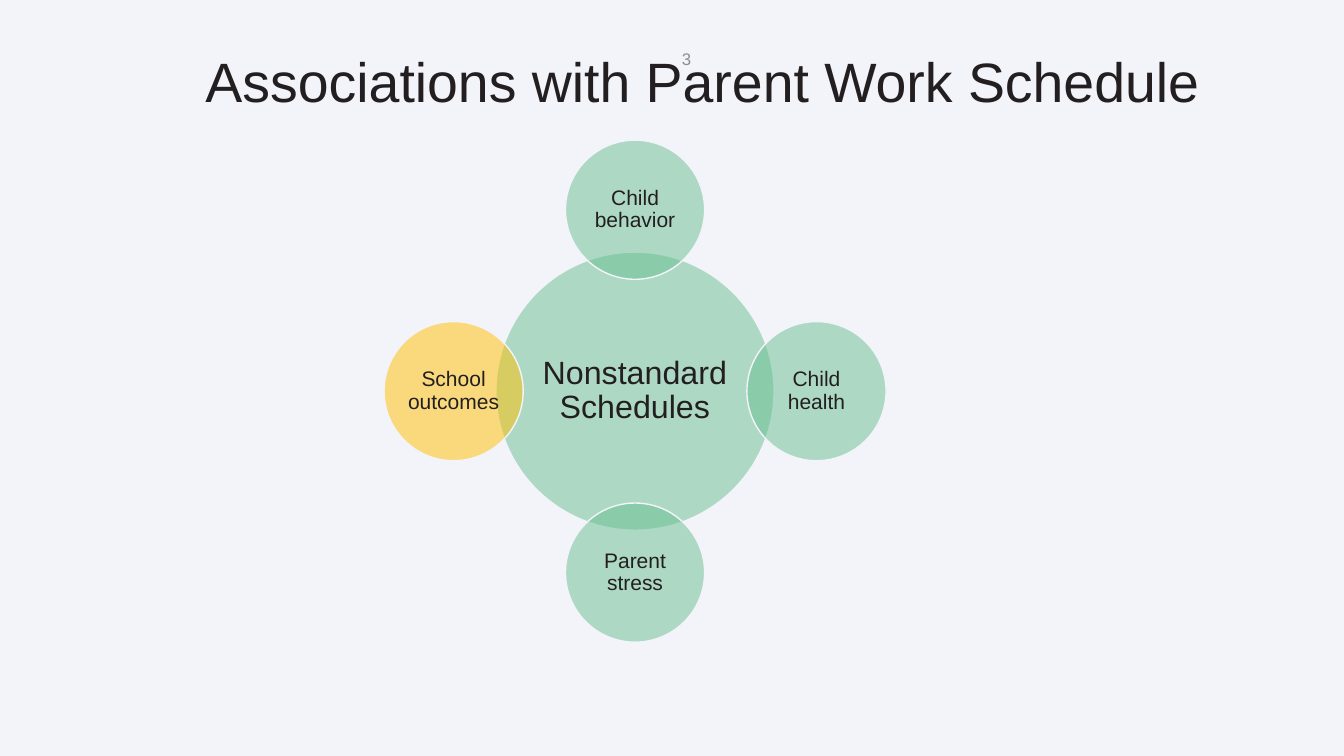
from lxml import etree
from pptx import Presentation
from pptx.dml.color import RGBColor
from pptx.enum.shapes import MSO_SHAPE
from pptx.enum.text import MSO_ANCHOR, PP_ALIGN
from pptx.oxml.ns import qn
from pptx.util import Pt

OVAL = MSO_SHAPE.OVAL
MIDDLE, BOTTOM = MSO_ANCHOR.MIDDLE, MSO_ANCHOR.BOTTOM
LEFT, CENTER = PP_ALIGN.LEFT, PP_ALIGN.CENTER
COLORS = {
    "background": "F3F3FA",
    "text": "231F20",
    "number": "8D8D8D",
    "green": "69C08F",
    "yellow": "FFC000",
}


def rgb(name):
    return RGBColor.from_string(COLORS[name])


def write(sp, text, size, color, anchor, align, spacing):
    tf = sp.text_frame
    tf.word_wrap = True
    tf.vertical_anchor = anchor
    p = tf.paragraphs[0]
    p.alignment = align
    p.line_spacing = spacing
    r = p.add_run()
    r.text = text
    r.font.name = "Arial"
    r.font.size = Pt(size)
    r.font.color.rgb = rgb(color)


prs = Presentation()
prs.slide_width, prs.slide_height = Pt(960), Pt(540)
s = prs.slides.add_slide(prs.slide_layouts[6])
s.background.fill.solid()
s.background.fill.fore_color.rgb = rgb("background")

# Title
title = s.shapes.add_textbox(Pt(139.7), Pt(5.8), Pt(763.9), Pt(79.2))
write(title, "Associations with Parent Work Schedule", 39.6, "text", BOTTOM, LEFT, 0.9)

# Hub and its four satellites: text, direction from the hub, fill
HUB_X, HUB_Y = 453.6, 279.4
HUB_SIZE, SATELLITE_SIZE, ORBIT = 198.7, 99.4, 129.6
circles = [
    ("Nonstandard Schedules", 0, 0, "green"),
    ("Child behavior", 0, -1, "green"),
    ("Child health", 1, 0, "green"),
    ("Parent stress", 0, 1, "green"),
    ("School outcomes", -1, 0, "yellow"),
]
for text, dx, dy, color in circles:
    is_hub = dx == dy == 0
    size, font_size, inset = (HUB_SIZE, 23, 2.2) if is_hub else (SATELLITE_SIZE, 15, 1.4)
    left = HUB_X + dx * ORBIT - size / 2
    top = HUB_Y + dy * ORBIT - size / 2
    sp = s.shapes.add_shape(OVAL, Pt(left), Pt(top), Pt(size), Pt(size))
    sp.shadow.inherit = False
    sp.fill.solid()
    sp.fill.fore_color.rgb = rgb(color)
    # Half-transparent fill
    fill_color = sp.fill._xPr.find(qn("a:solidFill")).find(qn("a:srgbClr"))
    etree.SubElement(fill_color, qn("a:alpha")).set("val", "50000")
    sp.line.color.rgb = rgb("background")
    sp.line.width = Pt(1)
    tf = sp.text_frame
    tf.margin_left = tf.margin_right = tf.margin_top = tf.margin_bottom = Pt(inset)
    write(sp, text, font_size, "text", MIDDLE, CENTER, 0.9)

# Slide number
number = s.shapes.add_textbox(Pt(480), Pt(27.4), Pt(216), Pt(28.8))
write(number, "3", 12, "number", MIDDLE, LEFT, 1.0)

prs.save("out.pptx")
